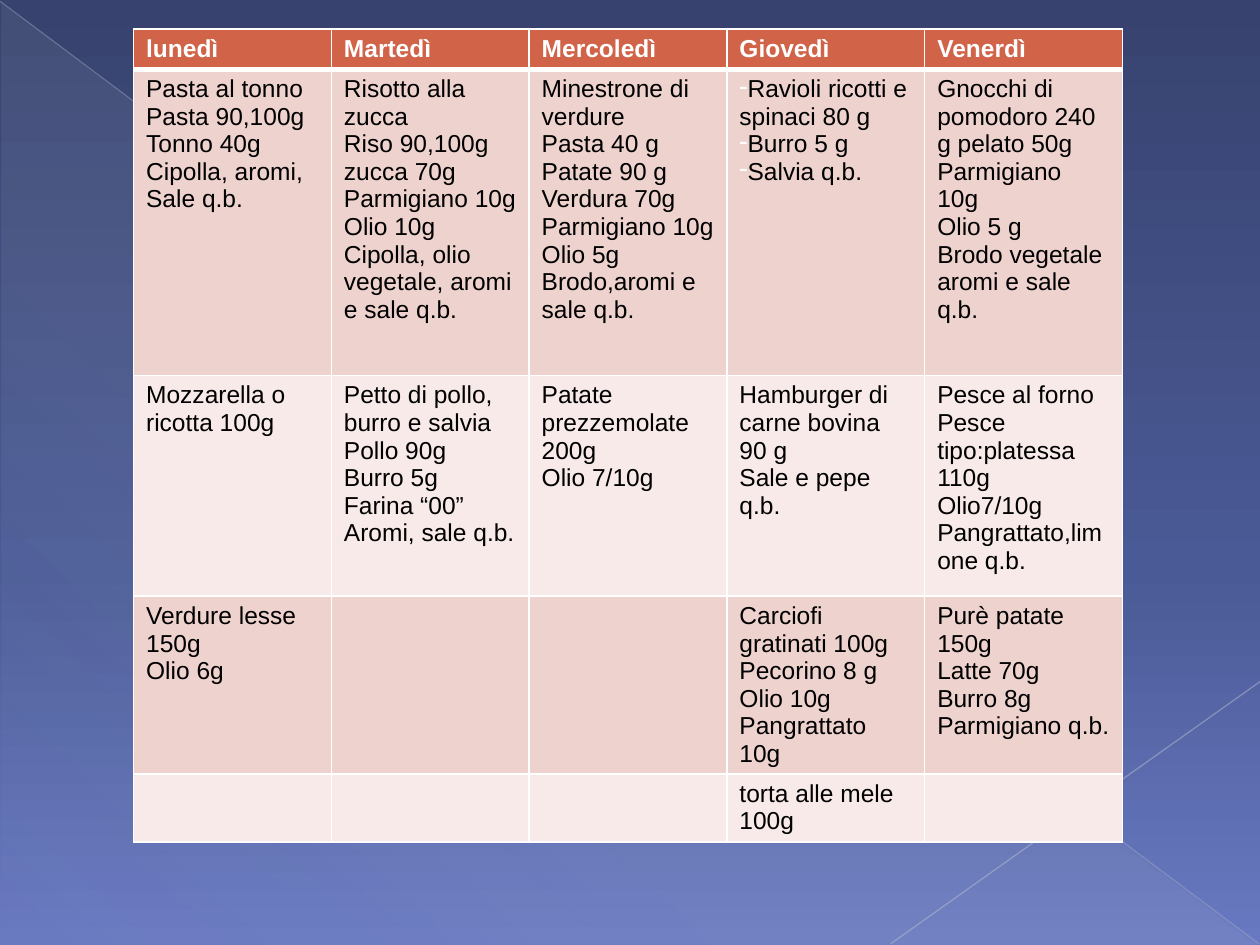
from dataclasses import dataclass

from lxml.etree import SubElement
from pptx import Presentation
from pptx.dml.color import RGBColor
from pptx.enum.shapes import MSO_CONNECTOR as Connector, MSO_SHAPE as Shape
from pptx.oxml.ns import qn
from pptx.util import Inches, Pt


@dataclass(frozen=True)
class Theme:
    font: str = "Arial"
    size: int = 14
    text: str = "000000"
    white: str = "FFFFFF"
    header: str = "D16349"
    bands: tuple = ("EED2CE", "F7EAE8")
    sky: tuple = ((0, "37426E", 100), (60, "4A5A96", 100), (100, "6979C1", 100))
    veil: tuple = ((0, "C5D1D7", 10), (70, "C5D1D7", 8), (100, "C5D1D7", 1))
    long_line: str = "B7BBCD"
    short_line: str = "C1C3D1"
    rule: float = 1
    header_rule: float = 3


DAYS = ["lunedì", "Martedì", "Mercoledì", "Giovedì", "Venerdì"]
MEALS = [
    [
        ["Pasta al tonno", "Pasta 90,100g", "Tonno 40g", "Cipolla, aromi,", "Sale q.b."],
        ["Risotto alla zucca", "Riso 90,100g\vzucca 70g", "Parmigiano 10g", "Olio 10g",
         "Cipolla, olio vegetale, aromi e sale q.b."],
        ["Minestrone di verdure", "Pasta 40 g", "Patate 90 g", "Verdura 70g",
         "Parmigiano 10g", "Olio 5g", "Brodo,aromi e sale q.b."],
        ["Ravioli ricotti e spinaci 80 g", "Burro 5 g", "Salvia q.b."],
        ["Gnocchi di", "pomodoro 240 g pelato 50g", "Parmigiano", "10g", "Olio 5 g",
         "Brodo vegetale aromi e sale q.b."],
    ],
    [
        ["Mozzarella o ricotta 100g"],
        ["Petto di pollo, burro e salvia", "Pollo 90g", "Burro 5g", "Farina “00”",
         "Aromi, sale q.b."],
        ["Patate prezzemolate 200g", "Olio 7/10g"],
        ["Hamburger di carne bovina 90 g", "Sale e pepe q.b."],
        ["Pesce al forno", "Pesce tipo:platessa 110g", "Olio7/10g", "Pangrattato,limone q.b."],
    ],
    [
        ["Verdure lesse 150g", "Olio 6g"],
        [],
        [],
        ["Carciofi gratinati 100g", "Pecorino 8 g", "Olio 10g", "Pangrattato 10g"],
        ["Purè patate 150g", "Latte 70g", "Burro 8g", "Parmigiano q.b."],
    ],
    [[], [], [], ["torta alle mele 100g"], []],
]
BULLETED = (1, 3)
COLUMN_WIDTH = 1.57
ROW_HEIGHTS = [0.32, 2.43, 1.75, 1.41, 0.54]


def add_color(parent, color, alpha=100):
    node = SubElement(parent, qn("a:srgbClr"), val=color)
    if alpha < 100:
        SubElement(node, qn("a:alpha"), val=str(alpha * 1000))


def write_text(frame, lines, *, font, size, color, bold=False, bullet=None):
    for index, line in enumerate(lines):
        para = frame.add_paragraph() if index else frame.paragraphs[0]
        para.text = line
        for span in para.runs:
            span.font.name = font
            span.font.size = Pt(size)
            span.font.bold = bold
            span.font.color.rgb = RGBColor.from_string(color)
        if bullet:
            props = para._p.get_or_add_pPr()
            add_color(SubElement(props, qn("a:buClr")), bullet)
            SubElement(props, qn("a:buChar"), char="-")


class PageBuilder:
    def __init__(self, page, theme):
        self.page = page
        self.theme = theme

    def gradient(self, fill, owner, stops, angle):
        fill.gradient()
        fill.gradient_angle = 360 - angle
        stop_list = next(owner.iter(qn("a:gsLst")))
        for stop in list(stop_list):
            stop_list.remove(stop)
        for position, color, alpha in stops:
            stop = SubElement(stop_list, qn("a:gs"), pos=str(position * 1000))
            add_color(stop, color, alpha)

    def background(self):
        self.gradient(self.page.background.fill, self.page.element, self.theme.sky, 90)

    def triangle(self, left, top, width, height):
        box = self.page.shapes.add_shape(
            Shape.RIGHT_TRIANGLE, Inches(left), Inches(top), Inches(width), Inches(height))
        box.shadow.inherit = False
        box.line.fill.background()
        self.gradient(box.fill, box.element, self.theme.veil, 133)

    def line(self, start, end, color, alpha):
        line = self.page.shapes.add_connector(
            Connector.STRAIGHT, *(Inches(value) for value in start + end))
        line.line.width = Pt(0.75)
        line.line.color.rgb = RGBColor.from_string(color)
        node = next(line.element.spPr.iter(qn("a:srgbClr")))
        SubElement(node, qn("a:alpha"), val=str(alpha * 1000))
        SubElement(line.element.spPr, qn("a:effectLst"))

    def borders(self, cell, **widths):
        props = cell._tc.get_or_add_tcPr()
        for side in "LRTB":
            width = widths.get(side, self.theme.rule)
            edge = SubElement(props, qn(f"a:ln{side}"), w=str(Pt(width)))
            add_color(SubElement(edge, qn("a:solidFill")), self.theme.white)

    def table(self, left, top):
        theme = self.theme
        rows = [[[day] for day in DAYS]] + MEALS
        table = self.page.shapes.add_table(
            len(rows), len(DAYS), Inches(left), Inches(top),
            Inches(COLUMN_WIDTH * len(DAYS)), Inches(sum(ROW_HEIGHTS))).table
        for column in table.columns:
            column.width = Inches(COLUMN_WIDTH)
        for r, (row, height) in enumerate(zip(rows, ROW_HEIGHTS)):
            table.rows[r].height = Inches(height)
            header = r == 0
            for c, lines in enumerate(row):
                cell = table.cell(r, c)
                self.borders(cell, **{0: {"B": theme.header_rule},
                                      1: {"T": theme.header_rule}}.get(r, {}))
                cell.fill.solid()
                cell.fill.fore_color.rgb = RGBColor.from_string(
                    theme.header if header else theme.bands[(r - 1) % 2])
                write_text(cell.text_frame, lines, font=theme.font, size=theme.size,
                           color=theme.white if header else theme.text, bold=header,
                           bullet=theme.white if (r, c) == BULLETED else None)


def main():
    deck = Presentation()
    deck.slide_width, deck.slide_height = Inches(10), Inches(7.5)
    theme = Theme()
    builder = PageBuilder(deck.slides.add_slide(deck.slide_layouts[6]), theme)
    builder.background()
    builder.triangle(0.01, 0.02, 9.98, 7.48)
    builder.line((0, 0.01), (9.99, 7.49), theme.long_line, 35)
    builder.line((10, 5.41), (7.07, 7.49), theme.short_line, 45)
    builder.table(1.06, 0.23)
    deck.save("out.pptx")


if __name__ == "__main__":
    main()
